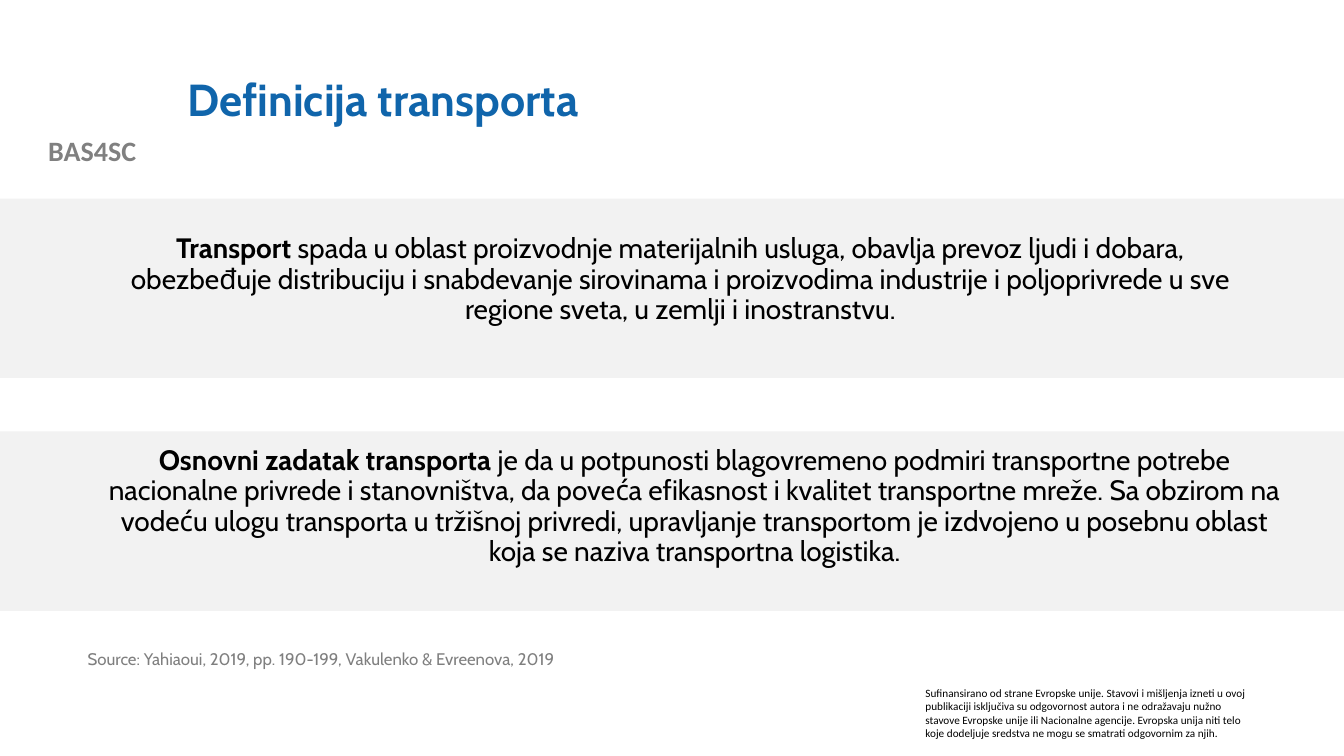
from pptx import Presentation
from pptx.dml.color import RGBColor
from pptx.enum.shapes import MSO_SHAPE
from pptx.enum.text import MSO_ANCHOR, PP_ALIGN
from pptx.util import Inches, Pt

RECTANGLE = MSO_SHAPE.RECTANGLE
TOP, MIDDLE = MSO_ANCHOR.TOP, MSO_ANCHOR.MIDDLE
LEFT, CENTER = PP_ALIGN.LEFT, PP_ALIGN.CENTER

SLIDE_WIDTH = 13.33
BAND_HEIGHT = 1.78
BLACK, BLUE, GRAY, SOURCE_GRAY, PALE = "000000", "1065AB", "808080", "7F7F7F", "F2F2F2"

PROJECT = "BAS4SC"
TITLE = "Definicija transporta"
DEFINITION = (
    "Transport ",
    "spada u oblast proizvodnje materijalnih usluga, obavlja prevoz ljudi i dobara, "
    "obezbeđuje distribuciju i snabdevanje sirovinama i proizvodima industrije i "
    "poljoprivrede u sve regione sveta, u zemlji i inostranstvu.",
)
MAIN_TASK = (
    "Osnovni zadatak transporta ",
    "je da u potpunosti blagovremeno podmiri transportne potrebe nacionalne privrede i "
    "stanovništva, da poveća efikasnost i kvalitet transportne mreže. Sa obzirom na "
    "vodeću ulogu transporta u tržišnoj privredi, upravljanje transportom je izdvojeno "
    "u posebnu oblast koja se naziva transportna logistika.",
)
SOURCE = "Source: Yahiaoui, 2019, pp. 190-199, Vakulenko & Evreenova, 2019"
DISCLAIMER = (
    "Sufinansirano od strane Evropske unije. Stavovi i mišljenja izneti u ovoj publikaciji "
    "isključiva su odgovornost autora i ne odražavaju nužno stavove Evropske unije ili "
    "Nacionalne agencije. Evropska unija niti telo koje dodeljuje sredstva ne mogu se "
    "smatrati odgovornim za njih."
)


def color(hex_value):
    """Turn a hex string into a colour."""
    return RGBColor.from_string(hex_value)


def add_band(slide, top):
    """Add a pale band across the full slide width."""
    band = slide.shapes.add_shape(
        RECTANGLE, Inches(0), Inches(top), Inches(SLIDE_WIDTH), Inches(BAND_HEIGHT))
    band.shadow.inherit = False
    band.fill.solid()
    band.fill.fore_color.rgb = color(PALE)
    band.line.fill.background()


def style_run(run, size, hex_value, font, bold):
    """Format one run."""
    run.font.name = font
    run.font.size = Pt(size)
    run.font.bold = bold
    run.font.color.rgb = color(hex_value)


def add_text(slide, place, text, size, hex_value, font="Cabin", bold=False,
             align=LEFT, anchor=TOP, spacing=0.9):
    """Add a wrapped one-paragraph text box and return its paragraph."""
    frame = slide.shapes.add_textbox(*map(Inches, place)).text_frame
    frame.word_wrap = True
    frame.vertical_anchor = anchor
    paragraph = frame.paragraphs[0]
    paragraph.text = text
    paragraph.alignment = align
    paragraph.line_spacing = spacing
    style_run(paragraph.runs[0], size, hex_value, font, bold)
    return paragraph


def add_statement(slide, place, statement):
    """Add a centred statement that opens with a bold term."""
    term, explanation = statement
    paragraph = add_text(slide, place, term, 20, BLACK, bold=True, align=CENTER)
    rest = paragraph.add_run()
    rest.text = explanation
    style_run(rest, 20, BLACK, "Cabin", False)


def main():
    """Build and save the slide."""
    deck = Presentation()
    deck.slide_width, deck.slide_height = Inches(SLIDE_WIDTH), Inches(7.5)
    slide = deck.slides.add_slide(deck.slide_layouts[6])

    add_text(slide, (0, 1.28, 1.83, 0.44), PROJECT, 20, GRAY, "Calibri",
             bold=True, align=CENTER, spacing=1.0)
    add_text(slide, (9.08, 6.76, 3.42, 0.64), DISCLAIMER, 8, BLACK, "Calibri", spacing=1.0)
    for band_top in (4.28, 1.97):
        add_band(slide, band_top)
    add_text(slide, (1.76, 0.4, 10.66, 1.22), TITLE, 32, BLUE, bold=True, anchor=MIDDLE)
    add_statement(slide, (1, 2.28, 11.5, 1.69), DEFINITION)
    add_statement(slide, (0.93, 4.38, 11.92, 1.69), MAIN_TASK)
    add_text(slide, (0.77, 6.41, 5.6, 0.52), SOURCE, 12, SOURCE_GRAY)

    deck.save("out.pptx")


if __name__ == "__main__":
    main()
